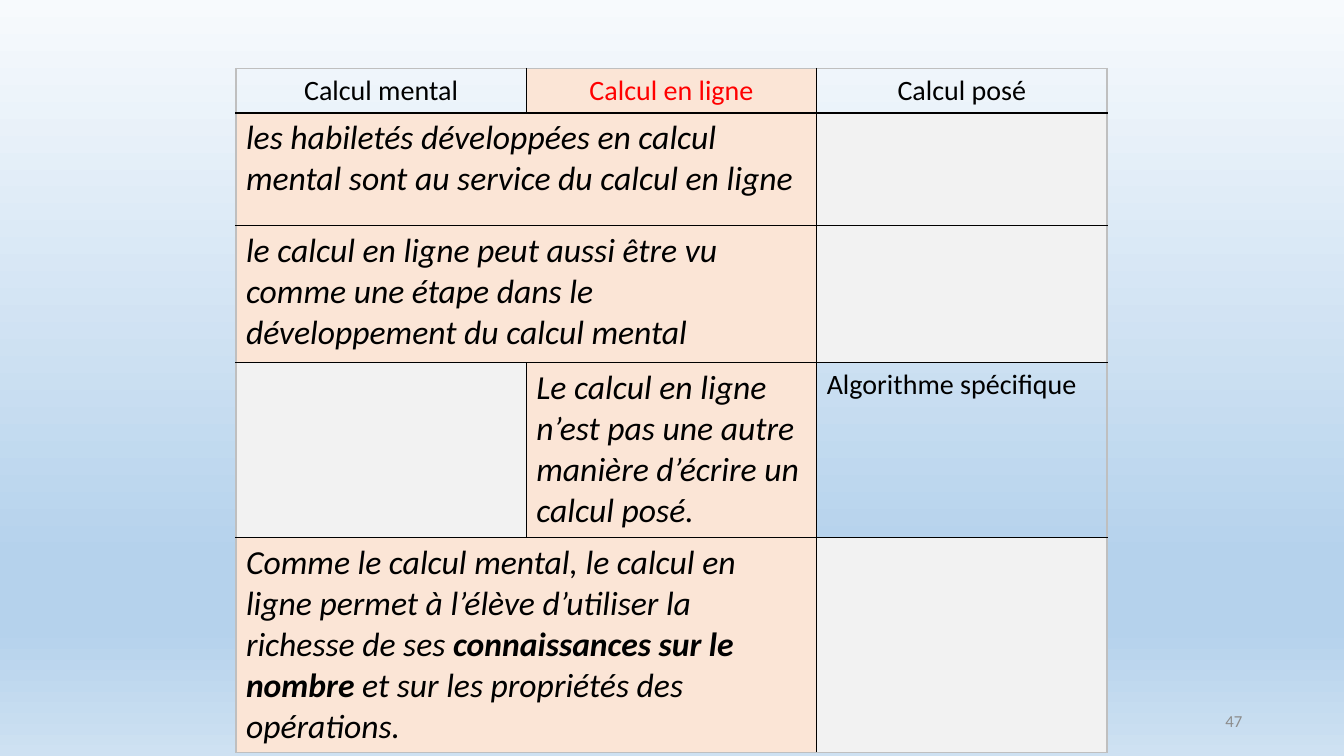
from dataclasses import dataclass

from lxml.etree import SubElement
from pptx import Presentation
from pptx.dml.color import RGBColor
from pptx.enum.text import MSO_ANCHOR, PP_ALIGN
from pptx.oxml import parse_xml
from pptx.oxml.ns import nsdecls, qn
from pptx.slide import Slide
from pptx.table import Table
from pptx.util import Inches, Pt

FONT = "Calibri"
BLACK, RED, GREY = "000000", "FF0000", "8C8C8C"
PEACH, PALE, OUTLINE = "FBE5D6", "F2F2F2", "BFBFBF"
COLUMN_WIDTH = 2.88
ROW_HEIGHTS = [0.43, 1.12, 1.36, 1.73, 2.13]
BACKGROUND_STOPS = [(0, "F7FAFD"), (74, "B5D2EC"), (83, "B5D2EC"), (100, "CEE1F2")]


@dataclass(frozen=True)
class CellSpec:
    row: int
    column: int
    runs: tuple[str, ...] = ()  # every second run is bold
    fill: str | None = None
    span: int = 1
    size: int = 24
    italic: bool = True
    color: str = BLACK
    align: PP_ALIGN = PP_ALIGN.LEFT


def header(column: int, text: str, color: str = BLACK, fill: str | None = None) -> CellSpec:
    return CellSpec(0, column, (text,), fill, size=20, italic=False,
                    color=color, align=PP_ALIGN.CENTER)


def shared(row: int, *runs: str) -> CellSpec:
    """Statement common to mental and in-line calculation."""
    return CellSpec(row, 0, runs, PEACH, span=2)


CELLS = [
    header(0, "Calcul mental"),
    header(1, "Calcul en ligne", RED, PEACH),
    header(2, "Calcul posé"),
    shared(1, "les habiletés développées en calcul mental sont au service du calcul en ligne"),
    CellSpec(1, 2, fill=PALE),
    shared(2, "le calcul en ligne peut aussi être vu comme une étape dans le "
              "développement du calcul mental"),
    CellSpec(2, 2, fill=PALE),
    CellSpec(3, 0, fill=PALE),
    CellSpec(3, 1, ("Le calcul en ligne n’est pas une autre manière d’écrire un calcul posé.",),
             PEACH),
    CellSpec(3, 2, ("Algorithme spécifique",), size=20, italic=False),
    shared(4, "Comme le calcul mental, le calcul en ligne permet à l’élève d’utiliser la "
              "richesse de ses", " connaissances sur le nombre ",
           "et sur les propriétés des opérations."),
    CellSpec(4, 2, fill=PALE),
]


def rgb(color: str) -> RGBColor:
    return RGBColor.from_string(color)


def paint_background(slide: Slide) -> None:
    slide.background.fill.solid()
    solid = next(slide.element.iter(qn("a:solidFill")))
    stops = "".join(
        f'<a:gs pos="{position * 1000}"><a:srgbClr val="{color}"/></a:gs>'
        for position, color in BACKGROUND_STOPS
    )
    gradient = parse_xml(
        f'<a:gradFill {nsdecls("a")} rotWithShape="1"><a:gsLst>{stops}</a:gsLst>'
        '<a:lin ang="5400000" scaled="0"/></a:gradFill>'
    )
    solid.getparent().replace(solid, gradient)


def fill_cell(table: Table, spec: CellSpec) -> None:
    cell = table.cell(spec.row, spec.column)
    if spec.span > 1:
        cell.merge(table.cell(spec.row, spec.column + spec.span - 1))
    if spec.fill:
        cell.fill.solid()
        cell.fill.fore_color.rgb = rgb(spec.fill)
    else:
        cell.fill.background()
    paragraph = cell.text_frame.paragraphs[0]
    paragraph.alignment = spec.align
    font = paragraph.font
    font.name, font.size, font.italic = FONT, Pt(spec.size), spec.italic
    font.color.rgb = rgb(spec.color)
    for index, text in enumerate(spec.runs):
        run = paragraph.add_run()
        run.text = text
        run.font.bold = index % 2 == 1


def draw_borders(table: Table) -> None:
    """Black inner lines and a grey outline."""
    last_row, last_column = len(table.rows) - 1, len(table.columns) - 1
    for row in range(last_row + 1):
        for column in range(last_column + 1):
            properties = table.cell(row, column)._tc.get_or_add_tcPr()
            outer = {"L": column == 0, "R": column == last_column,
                     "T": row == 0, "B": row == last_row}
            for index, (side, is_outer) in enumerate(outer.items()):
                line = parse_xml(f'<a:ln{side} {nsdecls("a")} w="{Pt(1)}"/>')
                solid = SubElement(line, qn("a:solidFill"))
                SubElement(solid, qn("a:srgbClr"), val=OUTLINE if is_outer else BLACK)
                properties.insert(index, line)


def add_comparison_table(slide: Slide) -> None:
    frame = slide.shapes.add_table(len(ROW_HEIGHTS), 3, Inches(2.34), Inches(0.68),
                                   Inches(3 * COLUMN_WIDTH), Inches(sum(ROW_HEIGHTS)))
    table = frame.table
    table.first_row = table.horz_banding = False
    for column in table.columns:
        column.width = Inches(COLUMN_WIDTH)
    for row, height in zip(table.rows, ROW_HEIGHTS):
        row.height = Inches(height)
    for spec in CELLS:
        fill_cell(table, spec)
    draw_borders(table)


def add_page_number(slide: Slide) -> None:
    box = slide.shapes.add_textbox(Inches(9.42), Inches(6.95), Inches(3), Inches(0.4))
    frame = box.text_frame
    frame.word_wrap = True
    frame.vertical_anchor = MSO_ANCHOR.MIDDLE
    paragraph = frame.paragraphs[0]
    paragraph.text = "47"
    paragraph.alignment = PP_ALIGN.RIGHT
    paragraph.font.name, paragraph.font.size = FONT, Pt(12)
    paragraph.font.color.rgb = rgb(GREY)


def main() -> None:
    presentation = Presentation()
    presentation.slide_width, presentation.slide_height = Inches(13.33), Inches(7.5)
    slide = presentation.slides.add_slide(presentation.slide_layouts[6])
    paint_background(slide)
    add_comparison_table(slide)
    add_page_number(slide)
    presentation.save("out.pptx")


if __name__ == "__main__":
    main()
